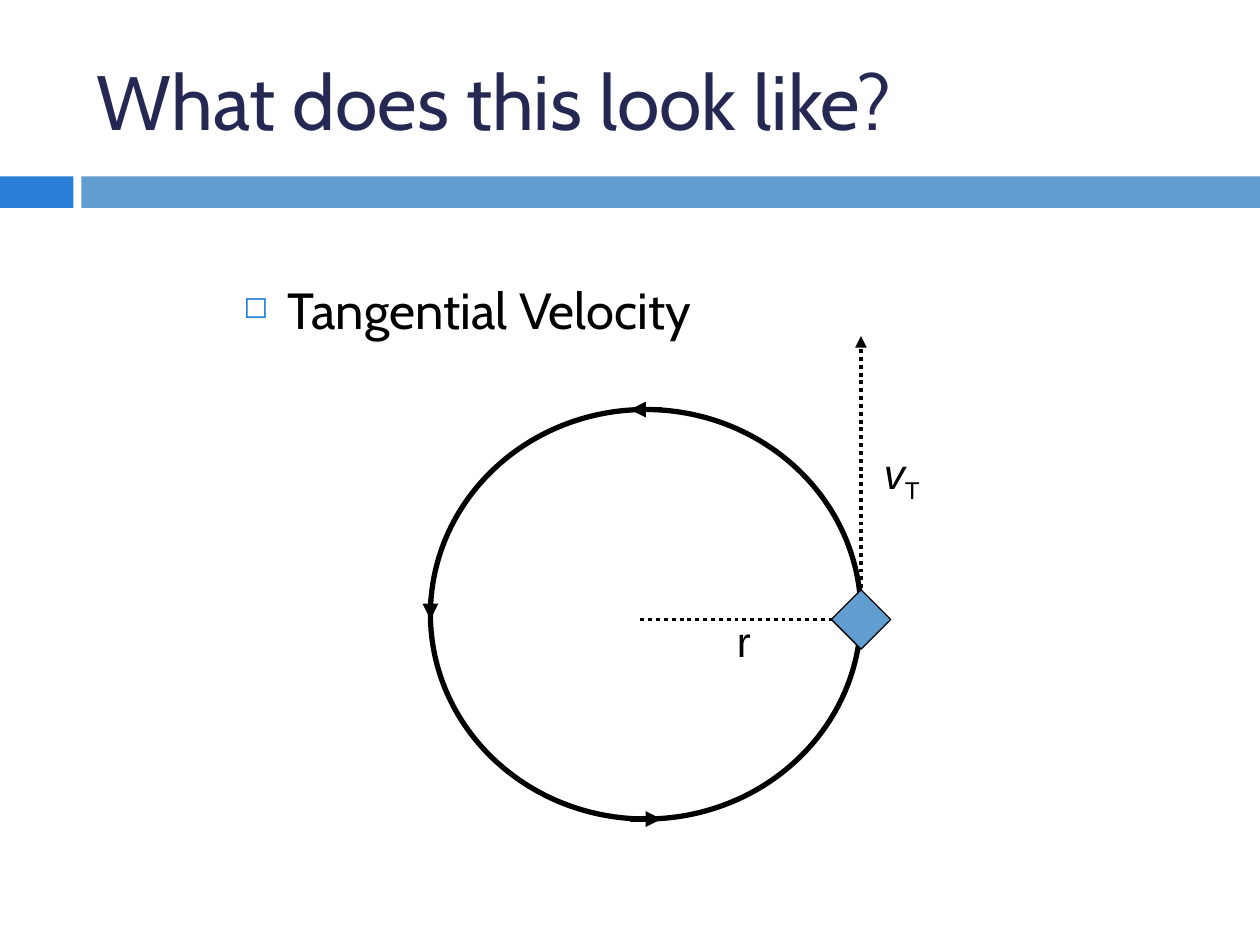
from lxml.etree import SubElement
from pptx import Presentation
from pptx.dml.color import RGBColor
from pptx.enum.dml import MSO_LINE
from pptx.enum.shapes import MSO_CONNECTOR, MSO_SHAPE
from pptx.enum.text import MSO_ANCHOR, PP_ALIGN
from pptx.oxml.ns import qn
from pptx.util import Pt

BLACK, NAVY, BLUE, LIGHT_BLUE = "000000", "242852", "297FD5", "629DD1"


def color(hex_string):
    return RGBColor.from_string(hex_string)


class SlideBuilder:
    """Holds the style and the current slide; all lengths are in points."""

    heading_font = "Cabin"
    label_font = "Arial"

    def __init__(self, slide):
        self.slide = slide

    def format_font(self, paragraph, name, size, hex_string):
        paragraph.font.name = name
        paragraph.font.size = Pt(size)
        paragraph.font.color.rgb = color(hex_string)

    def title(self, text, left, top, width, height):
        shape = self.slide.shapes.title
        shape.left, shape.top = Pt(left), Pt(top)
        shape.width, shape.height = Pt(width), Pt(height)
        shape.text_frame.text = text
        shape.text_frame.vertical_anchor = MSO_ANCHOR.MIDDLE
        paragraph = shape.text_frame.paragraphs[0]
        paragraph.alignment = PP_ALIGN.LEFT
        self.format_font(paragraph, self.heading_font, 44, NAVY)

    def shape(self, kind, left, top, width, height, fill=None, line_width=0, rotation=0):
        shape = self.slide.shapes.add_shape(kind, Pt(left), Pt(top), Pt(width), Pt(height))
        shape.shadow.inherit = False
        shape.rotation = rotation
        if fill:
            shape.fill.solid()
            shape.fill.fore_color.rgb = color(fill)
        else:
            shape.fill.background()
        if line_width:
            shape.line.color.rgb = color(BLACK)
            shape.line.width = Pt(line_width)
        else:
            shape.line.fill.background()

    def arrow(self, start, end, width, dotted=False):
        connector = self.slide.shapes.add_connector(
            MSO_CONNECTOR.STRAIGHT, *(Pt(value) for value in (*start, *end)))
        connector.line.color.rgb = color(BLACK)
        connector.line.width = Pt(width)
        if dotted:
            connector.line.dash_style = MSO_LINE.ROUND_DOT
        properties = connector._element.spPr
        SubElement(properties.find(qn("a:ln")), qn("a:tailEnd"), type="triangle")
        SubElement(properties, qn("a:effectLst"))

    def text_box(self, left, top, width, height):
        box = self.slide.shapes.add_textbox(Pt(left), Pt(top), Pt(width), Pt(height))
        box.text_frame.word_wrap = True
        return box.text_frame.paragraphs[0]

    def bullet(self, text, left, top, width, height):
        paragraph = self.text_box(left, top, width, height)
        paragraph.text = text
        paragraph.space_before = Pt(7)
        self.format_font(paragraph, self.heading_font, 29, BLACK)
        properties = paragraph._p.get_or_add_pPr()
        properties.set("marL", str(Pt(25.2)))
        properties.set("indent", str(Pt(-25.2)))
        bullet_color = SubElement(properties, qn("a:buClr"))
        SubElement(bullet_color, qn("a:srgbClr"), val=BLUE)
        SubElement(properties, qn("a:buSzPct"), val="60000")
        SubElement(properties, qn("a:buChar"), char="◻")
        # The schema puts default run properties after the bullet
        properties.append(properties.find(qn("a:defRPr")))

    def label(self, text, left, top, width, height, subscript="", italic=False):
        paragraph = self.text_box(left, top, width, height)
        self.format_font(paragraph, self.label_font, 24, BLACK)
        spacing = paragraph._p.get_or_add_pPr().get_or_add_spcBef()
        SubElement(spacing, qn("a:spcPct"), val="50000")
        run = paragraph.add_run()
        run.text = text
        run.font.italic = italic
        if subscript:
            run = paragraph.add_run()
            run.text = subscript
            run.font._element.set("baseline", "-25000")


def main():
    presentation = Presentation()
    presentation.slide_width, presentation.slide_height = Pt(720), Pt(540)
    builder = SlideBuilder(presentation.slides.add_slide(presentation.slide_layouts[5]))

    # Heading and divider bars
    builder.shape(MSO_SHAPE.RECTANGLE, 0, 100.8, 42, 18, BLUE)
    builder.shape(MSO_SHAPE.RECTANGLE, 46.5, 100.8, 673.5, 18, LIGHT_BLUE)
    builder.title("What does this look like?", 48, 18, 687, 78)
    builder.bullet("Tangential Velocity", 132, 156, 552, 54)

    # Circular orbit
    left, top, width, height = 246, 234, 246, 234
    right, bottom = left + width, top + height
    body_y = 354

    # Velocity and radius
    builder.arrow((right, body_y), (right, 192), 2.25, dotted=True)
    builder.label("r", 414, 348, 24, 36)
    builder.label("v", 498, 252, 54, 36, subscript="T", italic=True)
    builder.arrow((366, body_y), (right, body_y), 2.25, dotted=True)
    builder.shape(MSO_SHAPE.OVAL, left, top, width, height, line_width=3)

    # Direction of travel, counterclockwise
    for start, end in (
        ((left, 342), (left, body_y)),
        ((360, bottom), (378, bottom)),
        ((right, body_y), (right, 342)),
        ((378, top), (360, top)),
    ):
        builder.arrow(start, end, 3)

    # Moving body
    size = 24
    builder.shape(MSO_SHAPE.RECTANGLE, right - size / 2, body_y - size / 2, size, size,
                  LIGHT_BLUE, line_width=0.75, rotation=45)

    presentation.save("out.pptx")


if __name__ == "__main__":
    main()
